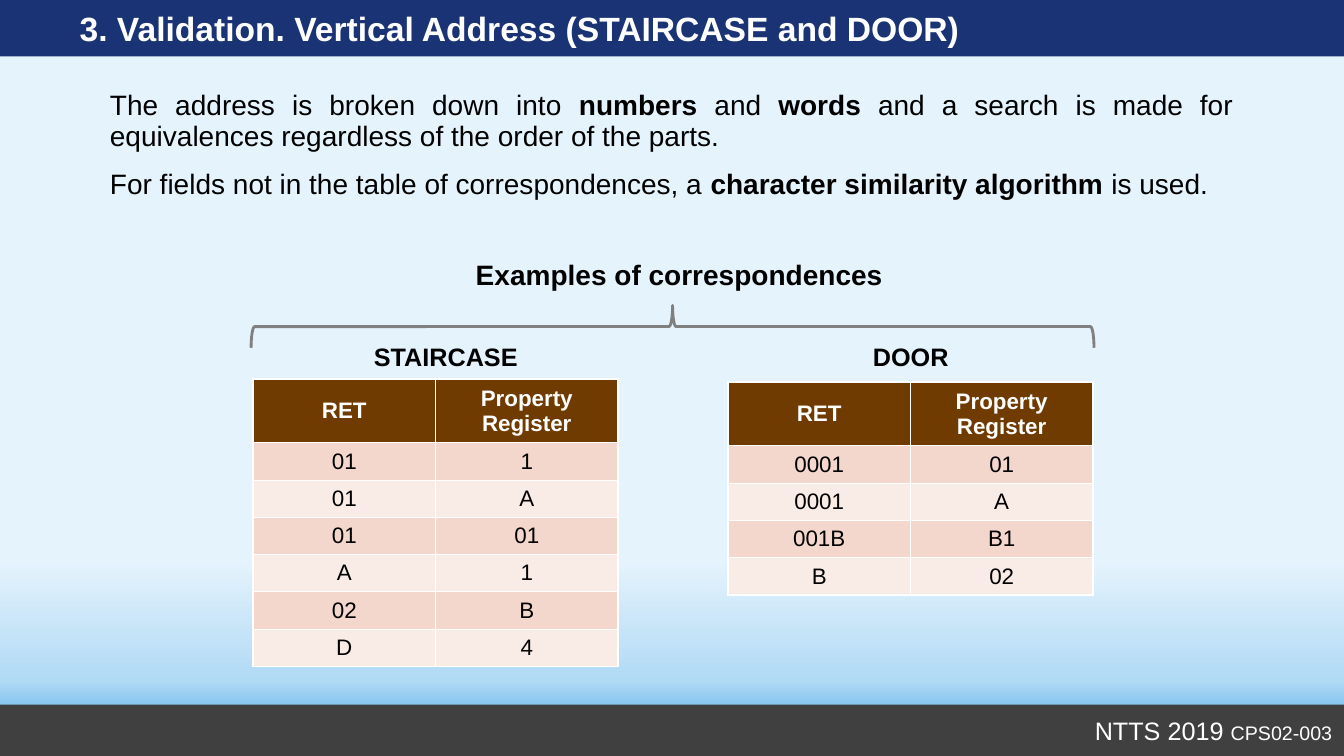
from dataclasses import dataclass
from lxml.etree import SubElement
from pptx import Presentation
from pptx.dml.color import RGBColor
from pptx.enum.shapes import MSO_SHAPE
from pptx.enum.text import MSO_ANCHOR, MSO_AUTO_SIZE, PP_ALIGN
from pptx.oxml.ns import qn
from pptx.util import Pt

PX = 9144  # 100 px to the inch


@dataclass(frozen=True)
class Theme:
    face: str = "Arial"
    ink: str = "000000"
    white: str = "FFFFFF"
    navy: str = "193374"
    dark: str = "404040"
    gray: str = "808080"
    brown: str = "703B01"
    bands: tuple = ("F3D6CC", "F9ECE7")
    sky: tuple = ((0, "E5F3FC"), (74, "E5F3FC"), (90, "B1DAF5"), (100, "2C9AE5"))
    title: int = 24
    body: int = 20
    label: int = 18
    cell: int = 16
    small: int = 14


THEME = Theme()

INTRO = (
    "The address is broken down into *numbers* and *words* and a search is made "
    "for equivalences regardless of the order of the parts.",
    "For fields not in the table of correspondences, a "
    "*character similarity algorithm* is used.",
)
HEAD = ("RET", "Property Register")
STAIRS = (("01", "1"), ("01", "A"), ("01", "01"), ("A", "1"), ("02", "B"), ("D", "4"))
DOORS = (("0001", "01"), ("0001", "A"), ("001B", "B1"), ("B", "02"))


def px(*sizes):
    return [size * PX for size in sizes]


def place(shape, box):
    shape.left, shape.top, shape.width, shape.height = px(*box)


def paint(fill, color):
    fill.solid()
    fill.fore_color.rgb = RGBColor.from_string(color)


def style(font, size, color, bold=None):
    font.name = THEME.face
    font.size = Pt(size)
    font.bold = bold
    font.color.rgb = RGBColor.from_string(color)


def set_sky(slide):
    fill = slide.background.fill
    fill.gradient()
    fill.gradient_angle = 270
    stops = slide.background._cSld.find(".//" + qn("a:gsLst"))
    for stop in list(stops):
        stops.remove(stop)
    for pos, color in THEME.sky:
        stop = SubElement(stops, qn("a:gs"), pos=str(pos * 1000))
        SubElement(stop, qn("a:srgbClr"), val=color)


def add_bar(slide, box, color):
    bar = slide.shapes.add_shape(MSO_SHAPE.RECTANGLE, *px(*box))
    bar.shadow.inherit = False
    paint(bar.fill, color)
    bar.line.fill.background()


def set_title(slide, box, text):
    title = slide.shapes.title
    place(title, box)
    paint(title.fill, THEME.navy)
    frame = title.text_frame
    frame.auto_size = MSO_AUTO_SIZE.NONE
    frame.vertical_anchor = MSO_ANCHOR.MIDDLE
    frame.margin_left, frame.margin_right = px(79, 30)
    frame.text = text
    para = frame.paragraphs[0]
    para.alignment = PP_ALIGN.LEFT
    style(para.font, THEME.title, THEME.white, True)


def set_body(slide, box, texts):
    body = slide.placeholders[1]
    place(body, box)
    frame = body.text_frame
    frame.auto_size = MSO_AUTO_SIZE.NONE
    for i, text in enumerate(texts):
        para = frame.add_paragraph() if i else frame.paragraphs[0]
        para.alignment = PP_ALIGN.JUSTIFY
        para.line_spacing = Pt(22)
        para.space_before = Pt(6 if i else 0)
        para.space_after = Pt(6)
        props = para._p.get_or_add_pPr()
        props.set("marL", "0")
        props.set("indent", "0")
        SubElement(props, qn("a:buNone"))
        style(para.font, THEME.body, THEME.ink)
        # Words between asterisks are bold
        for k, part in enumerate(text.split("*")):
            run = para.add_run()
            run.text = part
            run.font.bold = k % 2 == 1


def add_label(slide, box, text, size, color=THEME.ink, bold=True):
    frame = slide.shapes.add_textbox(*px(*box)).text_frame
    frame.word_wrap = False
    frame.text = text
    para = frame.paragraphs[0]
    style(para.font, size, color, bold)
    return para


def add_grid(slide, left, top, rows):
    wide, tall, head = 181, 37, 62
    data = (HEAD, *rows)
    box = px(left, top, wide * len(HEAD), head + tall * len(rows))
    table = slide.shapes.add_table(len(data), len(HEAD), *box).table
    for col in table.columns:
        col.width = wide * PX
    for r, row in enumerate(data):
        table.rows[r].height = (tall if r else head) * PX
        for c, text in enumerate(row):
            cell = table.cell(r, c)
            paint(cell.fill, THEME.bands[(r - 1) % 2] if r else THEME.brown)
            cell.vertical_anchor = MSO_ANCHOR.MIDDLE
            cell.text = text
            para = cell.text_frame.paragraphs[0]
            para.alignment = PP_ALIGN.CENTER
            style(para.font, THEME.cell, THEME.ink if r else THEME.white, r == 0)


def add_brace(slide, box):
    brace = slide.shapes.add_shape(MSO_SHAPE.LEFT_BRACE, *px(*box))
    brace.rotation = 90
    brace.shadow.inherit = False
    brace.fill.background()
    brace.line.color.rgb = RGBColor.from_string(THEME.gray)
    brace.line.width = Pt(2)


def main():
    deck = Presentation()
    deck.slide_width, deck.slide_height = px(1333, 750)
    slide = deck.slides.add_slide(deck.slide_layouts[1])

    # Backdrop, title and text
    set_sky(slide)
    add_bar(slide, (0, 699, 1333, 51), THEME.dark)
    set_title(slide, (0, 0, 1333, 56),
              "3. Validation. Vertical Address (STAIRCASE and DOOR)")
    set_body(slide, (99, 85, 1134, 150), INTRO)

    # Examples under one brace
    add_label(slide, (462, 251, 441, 44), "Examples of correspondences", THEME.body)
    add_brace(slide, (646, -94, 42, 836))
    add_label(slide, (361, 334, 171, 40), "STAIRCASE", THEME.label)
    add_grid(slide, 251, 376, STAIRS)
    add_label(slide, (856, 334, 96, 40), "DOOR", THEME.label)
    add_grid(slide, 722, 379, DOORS)

    # Footer
    foot = add_label(slide, (1076, 705, 258, 40), "NTTS 2019 ",
                     THEME.label, THEME.white, False)
    code = foot.add_run()
    code.text = "CPS02-003"
    code.font.size = Pt(THEME.small)

    deck.save("out.pptx")


if __name__ == "__main__":
    main()
